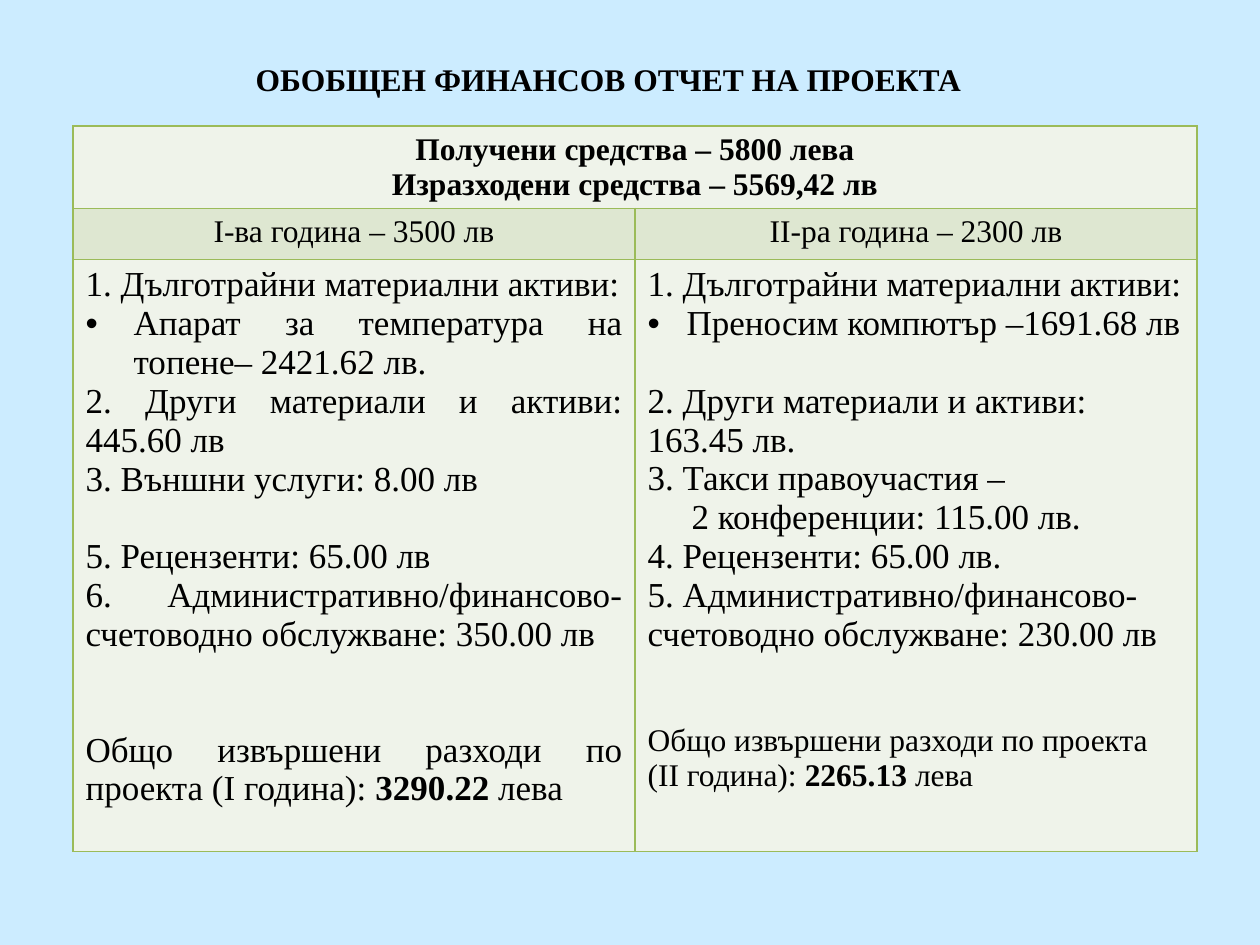
from dataclasses import dataclass

from lxml import etree
from pptx import Presentation
from pptx.dml.color import RGBColor
from pptx.enum.text import MSO_ANCHOR, PP_ALIGN
from pptx.oxml.ns import qn
from pptx.util import Pt

CENTER, JUSTIFY, LEFT = PP_ALIGN.CENTER, PP_ALIGN.JUSTIFY, PP_ALIGN.LEFT
MIDDLE = MSO_ANCHOR.MIDDLE
TITLE_ONLY = 5
EMU_PER_PX = 914400 / 126


@dataclass(frozen=True)
class Theme:
    font: str = "Times New Roman"
    ink: str = "000000"
    background: str = "CCECFF"
    light: str = "EFF3EA"
    band: str = "DEE7D1"
    border: str = "9BBB59"
    border_width: int = 1
    normal: int = 18
    large: int = 20


THEME = Theme()


@dataclass(frozen=True)
class Line:
    """One paragraph; spans are (text, bold) pairs, lengths px, gap points."""
    spans: tuple
    size: int = THEME.large
    indent: int = 0
    bullet: bool = False
    gap: int = 0


def plain(text, **options):
    return Line(((text, False),), **options)


def heading(text):
    return Line(((text, True),), size=THEME.normal)


def total(label, amount, **options):
    return Line(((label, False), (amount + " ", True), ("лева", False)), **options)


TITLE = heading("ОБОБЩЕН ФИНАНСОВ ОТЧЕТ НА ПРОЕКТА")
SUMMARY = [heading("Получени средства – 5800 лева"),
           heading("Изразходени средства – 5569,42 лв")]
YEARS = ["I-ва година – 3500 лв", "II-ра година – 2300 лв"]
FIRST_YEAR = [
    plain("1. Дълготрайни материални активи:"),
    plain("Апарат за температура на топене– 2421.62 лв.", indent=48, bullet=True),
    plain("2. Други материали и активи: 445.60 лв"),
    plain("3. Външни услуги: 8.00 лв"),
    plain("5. Рецензенти: 65.00 лв", gap=22),
    plain("6. Административно/финансово-счетоводно обслужване: 350.00 лв"),
    total("Общо извършени разходи по проекта (I година): ", "3290.22", gap=44),
]
SECOND_YEAR = [
    plain("1. Дълготрайни материални активи:"),
    plain("Преносим компютър –1691.68 лв", indent=39, bullet=True),
    plain("2. Други материали и активи: 163.45 лв.", gap=22),
    plain("3. Такси правоучастия –"),
    plain("2 конференции: 115.00 лв.", indent=44),
    plain("4. Рецензенти: 65.00 лв."),
    plain("5. Административно/финансово-счетоводно обслужване: 230.00 лв"),
    total("Общо извършени разходи по проекта (II година): ", "2265.13",
          size=THEME.normal, gap=40),
]


def px(length):
    return round(length * EMU_PER_PX)


def paint(fill, color):
    fill.solid()
    fill.fore_color.rgb = RGBColor.from_string(color)


def write_paragraph(para, line, align):
    para.alignment = align
    para.space_before = Pt(line.gap)
    properties = para._p.get_or_add_pPr()
    if line.indent:
        properties.set("marL", str(px(line.indent)))
        properties.set("indent", str(-px(line.indent) if line.bullet else 0))
    if line.bullet:
        etree.SubElement(properties, qn("a:buFont"), typeface="Arial")
        etree.SubElement(properties, qn("a:buChar"), char="•")
    for text, bold in line.spans:
        span = para.add_run()
        span.text = text
        span.font.name = THEME.font
        span.font.size = Pt(line.size)
        span.font.bold = bold
        span.font.color.rgb = RGBColor.from_string(THEME.ink)


def write_lines(frame, lines, align):
    for index, line in enumerate(lines):
        para = frame.add_paragraph() if index else frame.paragraphs[0]
        write_paragraph(para, line, align)


def add_borders(cell):
    properties = cell._tc.get_or_add_tcPr()
    for side in ("lnL", "lnR", "lnT", "lnB"):
        edge = etree.SubElement(properties, qn("a:" + side),
                                w=str(Pt(THEME.border_width)))
        fill = etree.SubElement(edge, qn("a:solidFill"))
        etree.SubElement(fill, qn("a:srgbClr"), val=THEME.border)


def fill_cell(cell, lines, align, color):
    write_lines(cell.text_frame, lines, align)
    paint(cell.fill, color)


def add_title(page):
    title = page.shapes.title
    title.left, title.top, title.width, title.height = map(px, (73, 32, 1071, 94))
    title.text_frame.vertical_anchor = MIDDLE
    write_lines(title.text_frame, [TITLE], CENTER)


def add_report(page):
    heights = (82, 51, 592)
    table = page.shapes.add_table(3, 2, px(73), px(126), px(1124),
                                  px(sum(heights))).table
    for row, height in zip(table.rows, heights):
        row.height = px(height)
    for cell in table.iter_cells():
        add_borders(cell)
    table.cell(0, 0).merge(table.cell(0, 1))
    paint(table.cell(0, 1).fill, THEME.light)
    fill_cell(table.cell(0, 0), SUMMARY, CENTER, THEME.light)
    for column, year in enumerate(YEARS):
        fill_cell(table.cell(1, column), [plain(year, size=THEME.normal)],
                  CENTER, THEME.band)
    fill_cell(table.cell(2, 0), FIRST_YEAR, JUSTIFY, THEME.light)
    fill_cell(table.cell(2, 1), SECOND_YEAR, LEFT, THEME.light)


def main():
    deck = Presentation()
    deck.slide_width, deck.slide_height = px(1260), px(945)
    page = deck.slides.add_slide(deck.slide_layouts[TITLE_ONLY])
    paint(page.background.fill, THEME.background)
    add_title(page)
    add_report(page)
    deck.save("out.pptx")


if __name__ == "__main__":
    main()
